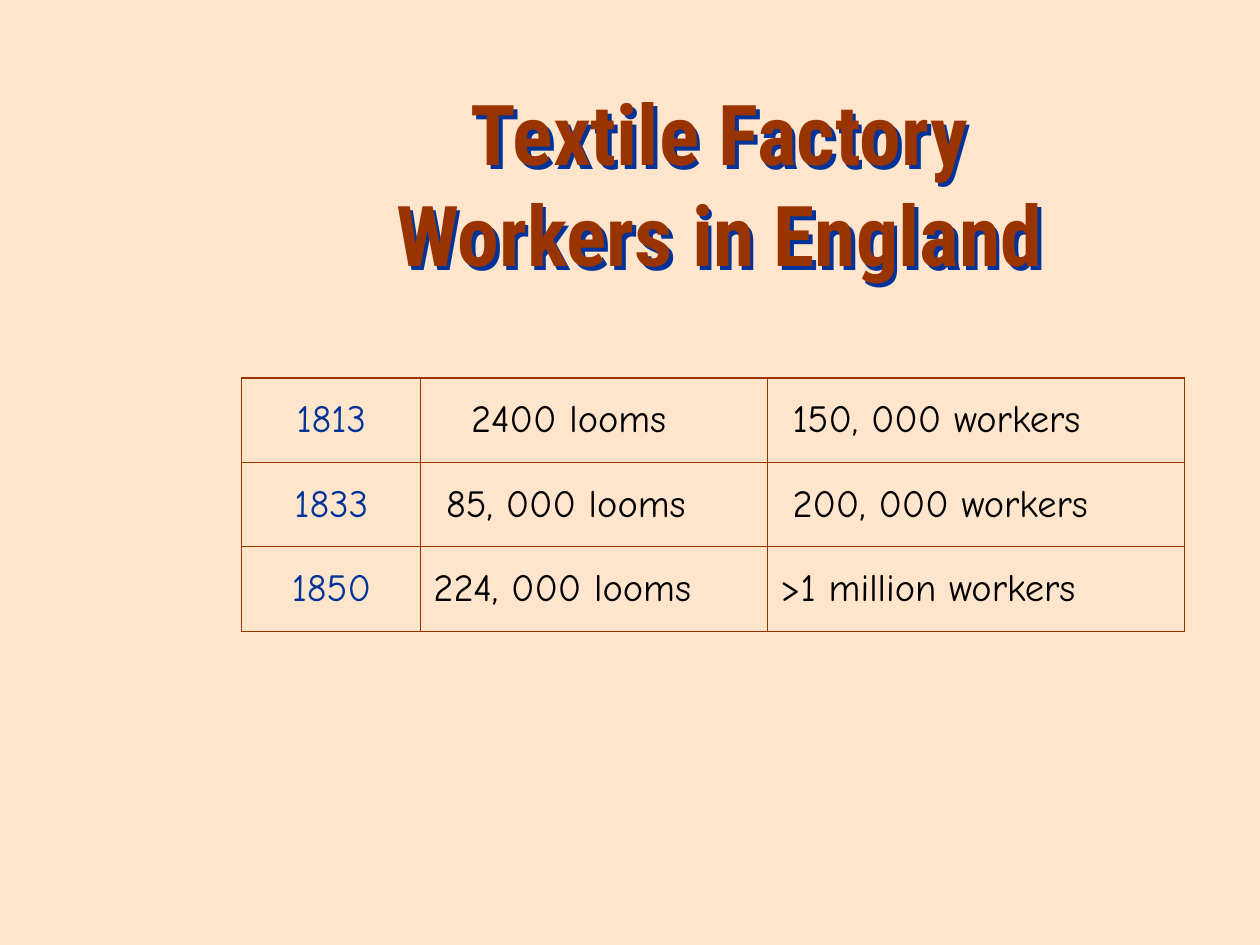
from lxml import etree
from pptx import Presentation
from pptx.dml.color import RGBColor
from pptx.enum import text
from pptx.oxml import ns
from pptx.util import Inches, Pt

CREAM = RGBColor(0xFF, 0xE5, 0xCB)
RUST = RGBColor(0x99, 0x33, 0x00)
BLUE = RGBColor(0x00, 0x33, 0x99)
BLACK = RGBColor(0x00, 0x00, 0x00)

# Content
TITLE = "Textile Factory\vWorkers in England"
ROWS = [
    ("1813", "2400 looms", "150, 000 workers"),
    ("1833", "85, 000 looms", "200, 000 workers"),
    ("1850", "224, 000 looms", ">1 million workers"),
]
INDENTS = [(0, 0.3, 0.1), (0, 0.1, 0.1), (0, 0, 0)]  # inches per cell
COLUMN_WIDTHS = [1.42, 2.75, 3.31]
ROW_HEIGHT = 0.67
LEFT = 1.92


def add_color(parent, color):
    etree.SubElement(parent, ns.qn("a:srgbClr"), val=str(color))


def add_text_shadow(shape, color):
    """An unfilled shape casts its shadow from the text."""
    effects = etree.SubElement(shape._element.spPr, ns.qn("a:effectLst"))
    shadow = etree.SubElement(effects, ns.qn("a:outerShdw"), dist=str(Pt(2.8)),
                              dir="2700000", algn="ctr", rotWithShape="0")
    add_color(shadow, color)


def set_borders(cell, color, width):
    properties = cell._tc.get_or_add_tcPr()
    for index, side in enumerate(("lnL", "lnR", "lnT", "lnB")):
        line = etree.Element(ns.qn("a:" + side), w=str(Pt(width)))
        add_color(etree.SubElement(line, ns.qn("a:solidFill")), color)
        properties.insert(index, line)


def set_font(paragraph, name, size, color, bold=False):
    font = paragraph.font
    font.name, font.size, font.bold = name, Pt(size), bold
    font.color.rgb = color


presentation = Presentation()
presentation.slide_width, presentation.slide_height = Inches(10), Inches(7.5)
slide = presentation.slides.add_slide(presentation.slide_layouts[5])
slide.background.fill.solid()
slide.background.fill.fore_color.rgb = CREAM

# Title
title = slide.shapes.title
title.left, title.top = Inches(LEFT), Inches(0.6)
title.width, title.height = Inches(7.58), Inches(1.7)
title.fill.background()
add_text_shadow(title, BLUE)
frame = title.text_frame
frame.text = TITLE
frame.word_wrap = True
frame.auto_size = text.MSO_AUTO_SIZE.SHAPE_TO_FIT_TEXT
frame.vertical_anchor = text.MSO_ANCHOR.TOP
frame.paragraphs[0].alignment = text.PP_ALIGN.CENTER
set_font(frame.paragraphs[0], "Roboto Condensed", 48, RUST, bold=True)

# Table of looms and workers by year
table = slide.shapes.add_table(
    len(ROWS), len(COLUMN_WIDTHS), Inches(LEFT), Inches(3),
    Inches(sum(COLUMN_WIDTHS)), Inches(ROW_HEIGHT * len(ROWS))).table
table.first_row = table.horz_banding = False
for column, width in zip(table.columns, COLUMN_WIDTHS):
    column.width = Inches(width)
for row, values, indents in zip(table.rows, ROWS, INDENTS):
    row.height = Inches(ROW_HEIGHT)
    for index, (cell, value, indent) in enumerate(zip(row.cells, values, indents)):
        is_year = index == 0
        cell.text = value
        cell.fill.background()
        cell.vertical_anchor = text.MSO_ANCHOR.MIDDLE
        cell.margin_left = Inches(0.1 + indent)
        set_borders(cell, RUST, 0.75)
        paragraph = cell.text_frame.paragraphs[0]
        paragraph.alignment = text.PP_ALIGN.CENTER if is_year else text.PP_ALIGN.LEFT
        set_font(paragraph, "Comic Neue", 22, BLUE if is_year else BLACK)

presentation.save("out.pptx")
